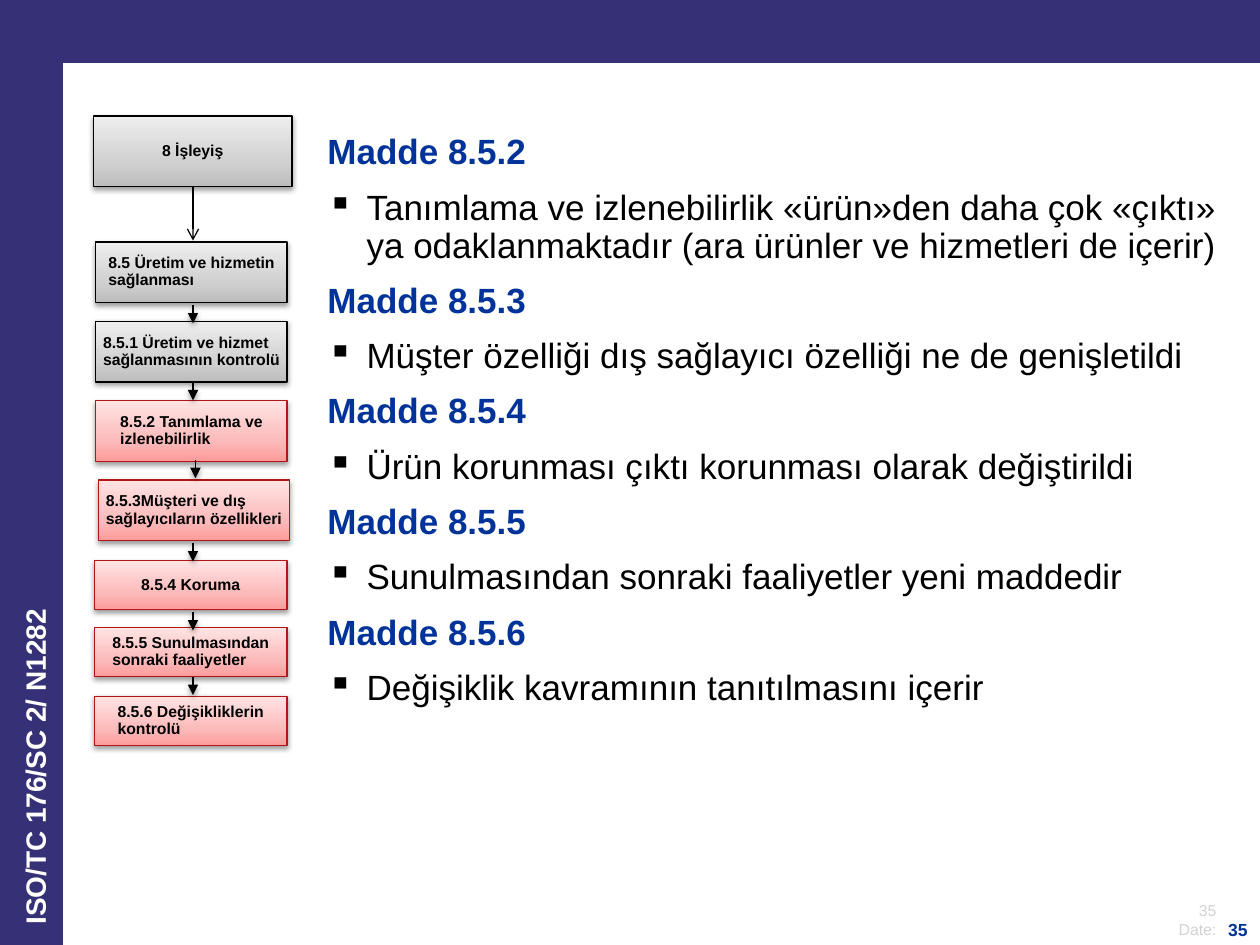
"""Build the clause 8.5 slide: a flow of clauses beside a summary of their changes."""
from dataclasses import dataclass

from lxml import etree
from pptx import Presentation
from pptx.dml.color import RGBColor
from pptx.enum.shapes import MSO_CONNECTOR, MSO_SHAPE
from pptx.enum.text import MSO_ANCHOR, PP_ALIGN
from pptx.oxml.ns import qn
from pptx.util import Cm, Pt

RECTANGLE = MSO_SHAPE.RECTANGLE
STRAIGHT = MSO_CONNECTOR.STRAIGHT
MIDDLE, BOTTOM = MSO_ANCHOR.MIDDLE, MSO_ANCHOR.BOTTOM
LEFT, RIGHT = PP_ALIGN.LEFT, PP_ALIGN.RIGHT


@dataclass(frozen=True)
class Theme:
    font: str = "Arial"
    band: str = "363177"
    heading: str = "003399"
    ink: str = "000000"
    white: str = "FFFFFF"
    faint: str = "D3D3D3"
    red: str = "B21616"
    grey_fade: tuple = ("BDBDBD", "D1D1D1", "EEEEEE")
    red_fade: tuple = ("FD9C9C", "FCBBBB", "FFE4E4")
    body_size: int = 20
    side_size: int = 16
    page_size: int = 10
    small_size: int = 9


THEME = Theme()


def write(paragraph, text, size, color, bold=False, align=LEFT):
    paragraph.text = text
    paragraph.alignment = align
    font = paragraph.font
    font.name, font.size, font.bold = THEME.font, Pt(size), bold
    font.color.rgb = RGBColor.from_string(color)


def add_shadow(properties):
    effects = etree.SubElement(properties, qn("a:effectLst"))
    shadow = etree.SubElement(effects, qn("a:outerShdw"), blurRad="40000", dist="20000",
                              dir="5400000", rotWithShape="0")
    tint = etree.SubElement(shadow, qn("a:srgbClr"), val=THEME.ink)
    etree.SubElement(tint, qn("a:alpha"), val="38000")


deck = Presentation()
deck.slide_width, deck.slide_height = Cm(25.4), Cm(19.05)
slide = deck.slides.add_slide(deck.slide_layouts[6])
shapes = slide.shapes

for width, height in ((25.4, 1.27), (1.27, 19.05)):
    band = shapes.add_shape(RECTANGLE, 0, 0, Cm(width), Cm(height))
    band.shadow.inherit = False
    band.fill.solid()
    band.fill.fore_color.rgb = RGBColor.from_string(THEME.band)
    band.line.fill.background()

committee = shapes.add_textbox(Cm(-3.89), Cm(13.51), Cm(9.58), Cm(1.17))
committee.rotation = 270
committee.text_frame.word_wrap = True
committee_line = committee.text_frame.paragraphs[0]
write(committee_line, "ISO/TC 176/SC 2/ N1282", THEME.side_size, THEME.white, True)
committee_line.line_spacing = 0.9

footers = (
    (23.47, 18.06, 1.3, 0.99, ("35", "Date: "), THEME.small_size, THEME.faint, False),
    (24.51, 18.42, 0.89, 0.66, ("35",), THEME.page_size, THEME.heading, True),
)
for left, top, width, height, lines, size, color, bold in footers:
    footer = shapes.add_textbox(Cm(left), Cm(top), Cm(width), Cm(height)).text_frame
    footer.word_wrap = False
    footer.vertical_anchor = BOTTOM
    for index, line in enumerate(lines):
        paragraph = footer.add_paragraph() if index else footer.paragraphs[0]
        write(paragraph, line, size, color, bold, RIGHT)

changes = (
    ("Madde 8.5.2", "Tanımlama ve izlenebilirlik «ürün»den daha çok «çıktı» ya "
                    "odaklanmaktadır (ara ürünler ve hizmetleri de içerir)"),
    ("Madde 8.5.3", "Müşter özelliği dış sağlayıcı özelliği ne de genişletildi"),
    ("Madde 8.5.4", "Ürün korunması çıktı korunması olarak değiştirildi"),
    ("Madde 8.5.5", "Sunulmasından sonraki faaliyetler yeni maddedir"),
    ("Madde 8.5.6", "Değişiklik kavramının tanıtılmasını içerir"),
)
summary = shapes.add_textbox(Cm(6.35), Cm(2.59), Cm(18.62), Cm(11.94)).text_frame
summary.word_wrap = True
for index, (clause, change) in enumerate(changes):
    heading = summary.add_paragraph() if index else summary.paragraphs[0]
    write(heading, clause, THEME.body_size, THEME.heading, True)
    detail = summary.add_paragraph()
    write(detail, change, THEME.body_size, THEME.ink)
    indent = detail._p.get_or_add_pPr()
    indent.set("marL", str(Cm(0.79)))
    indent.set("indent", str(Cm(-0.79)))
    for paragraph in (heading, detail):
        paragraph.line_spacing = 0.9
        paragraph.space_before = Pt(10)
    etree.SubElement(indent, qn("a:buChar"), char="▪")
    indent.append(indent.find(qn("a:defRPr")))

grey = (THEME.grey_fade, THEME.ink)
red = (THEME.red_fade, THEME.red)
clauses = (
    ("8 İşleyiş", 1.88, 2.34, 4.01, 1.42, grey),
    ("8.5 Üretim ve hizmetin sağlanması", 1.93, 4.88, 3.86, 1.22, grey),
    ("8.5.1 Üretim ve hizmet sağlanmasının kontrolü", 1.93, 6.48, 3.86, 1.22, grey),
    ("8.5.2 Tanımlama ve izlenebilirlik", 1.93, 8.08, 3.86, 1.22, red),
    ("8.5.3Müşteri ve dış sağlayıcıların özellikleri", 1.98, 9.68, 3.86, 1.22, red),
    ("8.5.4 Koruma", 1.9, 11.3, 3.89, 0.99, red),
    ("8.5.5 Sunulmasından sonraki faaliyetler", 1.9, 12.65, 3.89, 0.99, red),
    ("8.5.6 Değişikliklerin kontrolü", 1.9, 14.04, 3.89, 0.99, red),
)
for title, left, top, width, height, (fade, outline) in clauses:
    clause_box = shapes.add_shape(RECTANGLE, Cm(left), Cm(top), Cm(width), Cm(height))
    clause_box.fill.gradient()
    clause_box.fill.gradient_angle = 90
    clause_box.line.color.rgb = RGBColor.from_string(outline)
    clause_box.line.width = Pt(0.75)
    properties = clause_box.element.spPr
    stops = properties.find(".//" + qn("a:gsLst"))
    for stop in list(stops):
        stops.remove(stop)
    for position, color in zip((0, 35, 100), fade):
        stop = etree.SubElement(stops, qn("a:gs"), pos=str(position * 1000))
        etree.SubElement(stop, qn("a:srgbClr"), val=color)
    add_shadow(properties)

    label = clause_box.text_frame
    label.word_wrap = True
    label.vertical_anchor = MIDDLE
    label.margin_left = label.margin_right = Cm(0.13)
    label.margin_top = label.margin_bottom = Cm(0.13)
    label._txBody.bodyPr.set("anchorCtr", "1")
    write(label.paragraphs[0], title, THEME.small_size, THEME.ink, True)
    label.paragraphs[0].line_spacing = 0.9

steps = (
    (3.89, 3.76, 1.09, "arrow"),
    (3.89, 6.15, 0.37, "triangle"),
    (3.89, 7.7, 0.37, "triangle"),
    (3.94, 9.27, 0.37, "triangle"),
    (3.89, 10.95, 0.37, "triangle"),
    (3.89, 12.34, 0.37, "triangle"),
    (3.89, 13.64, 0.37, "triangle"),
)
for x, start, length, head in steps:
    step = shapes.add_connector(STRAIGHT, Cm(x), Cm(start), Cm(x), Cm(start + length))
    step.line.color.rgb = RGBColor.from_string(THEME.ink)
    step.line.width = Pt(0.75)
    etree.SubElement(step.line._get_or_add_ln(), qn("a:tailEnd"), type=head)
    if head == "triangle":
        add_shadow(step.element.spPr)
    else:
        etree.SubElement(step.element.spPr, qn("a:effectLst"))

deck.save("out.pptx")
